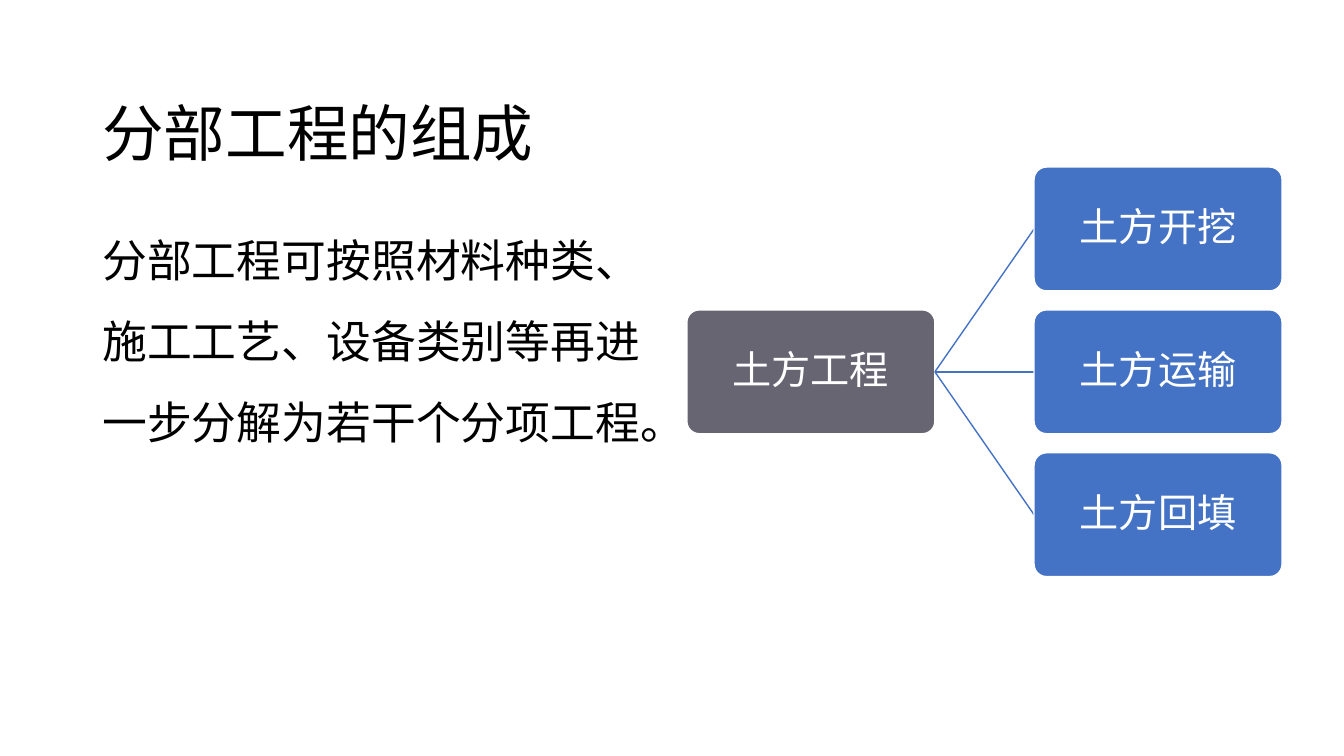
from lxml import etree
from pptx import Presentation
from pptx import util as u
from pptx.dml.color import RGBColor
from pptx.enum import lang, shapes, text
from pptx.oxml.ns import qn

COLORS = {"ink": "000000", "white": "FFFFFF", "root": "686573", "branch": "4472C4"}
LATIN_FONT = "Times New Roman"
CHINESE_FONT = "Noto Sans CJK SC"


def color(name):
    return RGBColor.from_string(COLORS[name])


def apply_format(target, values):
    for name, value in values.items():
        setattr(target, name, value)


class SlideBuilder:
    def __init__(self, page):
        self.page = page

    def add_words(self, box, words, size, font, ink, frame_format, para_format):
        """Fill a text frame with one styled paragraph."""
        frame = box.text_frame
        apply_format(frame, {"word_wrap": True, **frame_format})
        para = frame.paragraphs[0]
        apply_format(para, para_format)
        span = para.add_run()
        span.text = words
        span.font.color.rgb = color(ink)
        apply_format(span.font, {
            "size": u.Pt(size),
            "name": font,
            "language_id": lang.MSO_LANGUAGE_ID.SIMPLIFIED_CHINESE,
        })
        east_asian = etree.SubElement(span.font._element, qn("a:ea"))
        east_asian.set("typeface", CHINESE_FONT)

    def textbox(self, words, left, top, width, height, size, anchor, space_before=0):
        box = self.page.shapes.add_textbox(
            u.Cm(left), u.Cm(top), u.Cm(width), u.Cm(height))
        self.add_words(box, words, size, LATIN_FONT, "ink",
                       {"vertical_anchor": anchor},
                       {"line_spacing": 1.5, "space_before": u.Pt(space_before)})

    def node(self, words, left, top, width, height, fill):
        box = self.page.shapes.add_shape(
            shapes.MSO_SHAPE.ROUNDED_RECTANGLE,
            u.Cm(left), u.Cm(top), u.Cm(width), u.Cm(height))
        box.shadow.inherit = False
        box.adjustments[0] = 0.1
        box.fill.solid()
        box.fill.fore_color.rgb = color(fill)
        box.line.color.rgb = color("white")
        box.line.width = u.Pt(1)
        margins = {f"margin_{side}": u.Cm(0.05)
                   for side in ("left", "top", "right", "bottom")}
        self.add_words(box, words, 28, CHINESE_FONT, "white",
                       {"vertical_anchor": text.MSO_ANCHOR.MIDDLE, **margins},
                       {"alignment": text.PP_ALIGN.CENTER, "line_spacing": 0.9})

    def link(self, start_x, start_y, end_x, end_y):
        line = self.page.shapes.add_connector(
            shapes.MSO_CONNECTOR.STRAIGHT,
            u.Cm(start_x), u.Cm(start_y), u.Cm(end_x), u.Cm(end_y))
        line.line.color.rgb = color("branch")
        line.line.width = u.Pt(1)
        etree.SubElement(line._element.spPr, qn("a:effectLst"))


def main():
    deck = Presentation()
    deck.slide_width, deck.slide_height = u.Cm(33.87), u.Cm(19.05)
    builder = SlideBuilder(deck.slides.add_slide(deck.slide_layouts[6]))

    # Title and explanation
    builder.textbox("分部工程的组成", 2.33, 1.01, 29.21, 3.68, 44,
                    text.MSO_ANCHOR.MIDDLE)
    builder.textbox("分部工程可按照材料种类、施工工艺、设备类别等再进一步分解为若干个分项工程。",
                    2.33, 5.07, 14.97, 12.09, 32, text.MSO_ANCHOR.TOP, 10)

    # Tree: one root, branches spread evenly around its middle
    width, height, pitch = 6.25, 3.12, 3.6
    root_left, root_top, branch_left = 17.31, 7.81, 26.06
    middle = root_top + height / 2
    builder.node("土方工程", root_left, root_top, width, height, "root")
    branches = ["土方开挖", "土方运输", "土方回填"]
    for index, words in enumerate(branches):
        offset = (index - (len(branches) - 1) / 2) * pitch
        builder.link(root_left + width, middle, branch_left, middle + offset)
        builder.node(words, branch_left, root_top + offset, width, height, "branch")

    deck.save("out.pptx")


if __name__ == "__main__":
    main()
